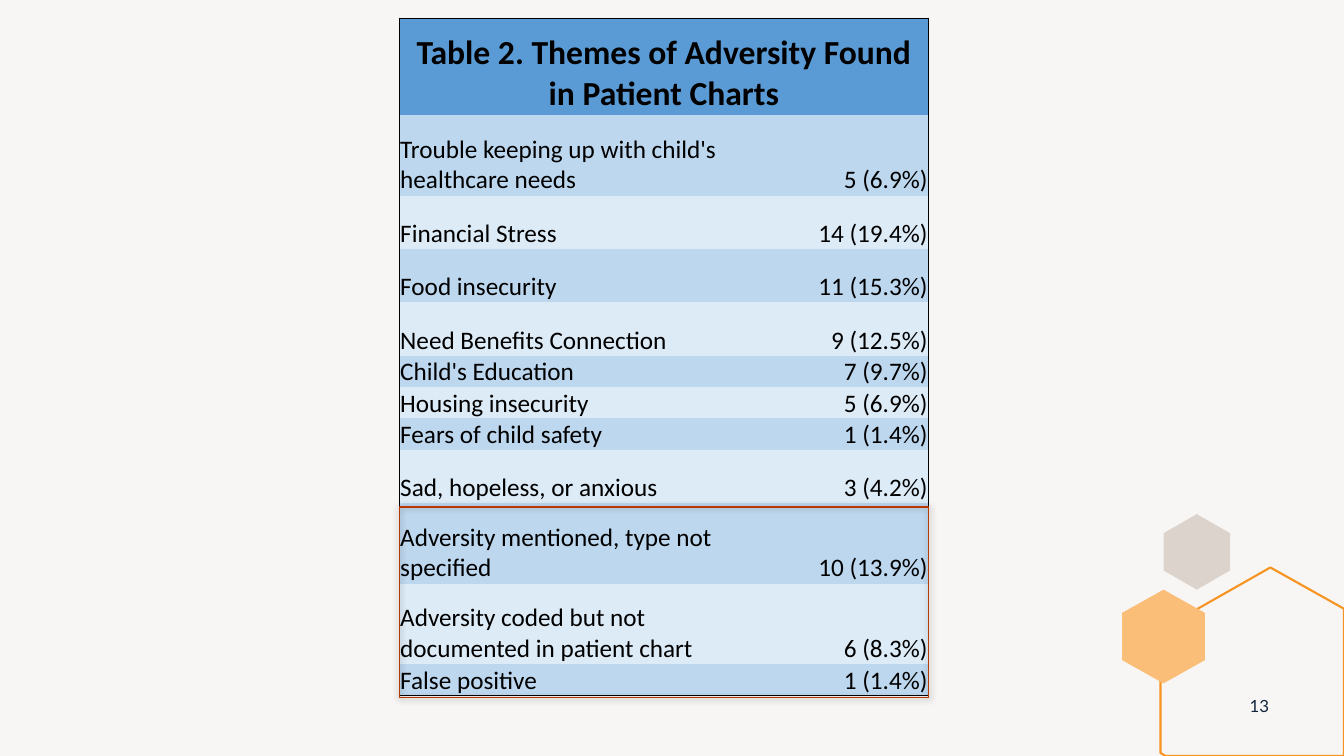
from lxml import etree
from pptx import Presentation
from pptx.dml.color import RGBColor
from pptx.enum.shapes import MSO_SHAPE
from pptx.enum.text import MSO_ANCHOR, PP_ALIGN
from pptx.oxml.ns import qn
from pptx.util import Inches, Pt

RECTANGLE = MSO_SHAPE.RECTANGLE
BOTTOM, MIDDLE = MSO_ANCHOR.BOTTOM, MSO_ANCHOR.MIDDLE
LEFT, CENTER, RIGHT = PP_ALIGN.LEFT, PP_ALIGN.CENTER, PP_ALIGN.RIGHT

BACKGROUND = RGBColor(0xF8, 0xF6, 0xF5)
BLACK = RGBColor(0, 0, 0)
NAVY = RGBColor(0x0F, 0x25, 0x3E)
TAUPE = RGBColor(0xDC, 0xD3, 0xCC)
ORANGE = RGBColor(0xF7, 0x93, 0x20)
PEACH = RGBColor(0xFA, 0xBE, 0x79)
RUST = RGBColor(0xB8, 0x38, 0x03)
HEADER_BLUE = RGBColor(0x5B, 0x9B, 0xD5)
BANDS = (RGBColor(0xBD, 0xD7, 0xEE), RGBColor(0xDD, 0xEB, 0xF7))

PLAIN_TABLE_STYLE = "{2D5ABB26-0587-4C30-8999-92F81FD0307C}"
TITLE = "Table 2. Themes of Adversity Found in Patient Charts"
TITLE_HEIGHT = 0.96
COLUMN_WIDTHS = (3.64, 1.61)
THEMES = (
    ("Trouble keeping up with child's healthcare needs", "5 (6.9%)", 0.8),
    ("Financial Stress", "14 (19.4%)", 0.53),
    ("Food insecurity", "11 (15.3%)", 0.53),
    ("Need Benefits Connection", "9 (12.5%)", 0.53),
    ("Child's Education", "7 (9.7%)", 0.31),
    ("Housing insecurity", "5 (6.9%)", 0.31),
    ("Fears of child safety", "1 (1.4%)", 0.31),
    ("Sad, hopeless, or anxious", "3 (4.2%)", 0.53),
    ("Adversity mentioned, type not specified", "10 (13.9%)", 0.8),
    ("Adversity coded but not documented in patient chart", "6 (8.3%)", 0.8),
    ("False positive", "1 (1.4%)", 0.31),
)

GREY_HEXAGON = ((11.87, 5.1), (12.2, 5.29), (12.2, 5.66),
                (11.87, 5.85), (11.54, 5.66), (11.54, 5.29))
OUTLINE_HEXAGON = ((12.6, 5.63), (13.33, 6.04), (13.33, 7.5),
                   (11.56, 7.5), (11.51, 7.47), (11.51, 6.25))
PEACH_HEXAGON = ((11.54, 5.85), (11.95, 6.08), (11.95, 6.55),
                 (11.54, 6.78), (11.13, 6.55), (11.13, 6.08))


def add_hexagon(page, corners, fill=None, line=None):
    """Draw a closed outline through the corners, filled or stroked."""
    points = [(Inches(x), Inches(y)) for x, y in corners]
    builder = page.shapes.build_freeform(*points[0])
    builder.add_line_segments(points[1:], close=True)
    hexagon = builder.convert_to_shape()
    hexagon.shadow.inherit = False
    if fill is None:
        hexagon.fill.background()
    else:
        hexagon.fill.solid()
        hexagon.fill.fore_color.rgb = fill
    if line is None:
        hexagon.line.fill.background()
    else:
        hexagon.line.color.rgb = line
        hexagon.line.width = Pt(1.5)


def write_text(frame, text, align, font, size, color, bold=False):
    """Put one formatted paragraph into a text frame."""
    frame.text = text
    para = frame.paragraphs[0]
    para.alignment = align
    style = para.runs[0].font
    style.name, style.size, style.bold = font, Pt(size), bold
    style.color.rgb = color


def add_page_number(page, number):
    """Add the page number in the lower right corner."""
    box = page.shapes.add_textbox(Inches(12.24), Inches(6.8), Inches(0.5), Inches(0.4))
    box.text_frame.word_wrap = True
    box.text_frame.vertical_anchor = MIDDLE
    write_text(box.text_frame, number, CENTER, "Lato", 12, NAVY)


def add_border(cell, side):
    """Give one side of a cell a thin black border."""
    properties = cell._tc.get_or_add_tcPr()
    border = etree.SubElement(properties, qn(f"a:ln{side}"), w=str(Pt(1)))
    fill = etree.SubElement(border, qn("a:solidFill"))
    etree.SubElement(fill, qn("a:srgbClr"), val=str(BLACK))


def format_cell(cell, text, align, fill, sides, size=18, bold=False):
    """Fill, border and label one table cell."""
    for side in sides:
        add_border(cell, side)
    cell.fill.solid()
    cell.fill.fore_color.rgb = fill
    cell.margin_left = cell.margin_right = cell.margin_top = Inches(0.01)
    cell.margin_bottom = 0
    cell.vertical_anchor = BOTTOM
    if text:
        write_text(cell.text_frame, text, align, "Calibri", size, BLACK, bold)


def add_theme_table(page):
    """Add the table of adversity themes under its merged title row."""
    heights = [TITLE_HEIGHT] + [height for _, _, height in THEMES]
    frame = page.shapes.add_table(
        len(heights), len(COLUMN_WIDTHS), Inches(3.96), Inches(0.18),
        Inches(sum(COLUMN_WIDTHS)), Inches(sum(heights)))
    frame.element.find(".//" + qn("a:tableStyleId")).text = PLAIN_TABLE_STYLE
    table = frame.table
    table.first_row = table.horz_banding = False
    for column, width in zip(table.columns, COLUMN_WIDTHS):
        column.width = Inches(width)
    for row, height in zip(table.rows, heights):
        row.height = Inches(height)

    table.cell(0, 0).merge(table.cell(0, 1))
    format_cell(table.cell(0, 0), TITLE, CENTER, HEADER_BLUE, "LRT", 24, True)
    format_cell(table.cell(0, 1), "", CENTER, HEADER_BLUE, "RT")
    for index, (theme, count, _) in enumerate(THEMES):
        band = BANDS[index % 2]
        bottom = "B" if index == len(THEMES) - 1 else ""
        format_cell(table.cell(index + 1, 0), theme, LEFT, band, "L" + bottom)
        format_cell(table.cell(index + 1, 1), count, RIGHT, band, "R" + bottom)


def add_highlight_frame(page):
    """Outline the last three themes with a softly shadowed rectangle."""
    outline = page.shapes.add_shape(
        RECTANGLE, Inches(3.96), Inches(5.03), Inches(5.25), Inches(1.89))
    outline.fill.background()
    outline.line.color.rgb = RUST
    outline.line.width = Pt(1)
    outline.shadow.inherit = False
    effects = outline.element.spPr.find(qn("a:effectLst"))
    shadow = etree.SubElement(effects, qn("a:outerShdw"), blurRad=str(Pt(5)),
                              dist="0", dir="0", algn="ctr", rotWithShape="0")
    color = etree.SubElement(shadow, qn("a:srgbClr"), val=str(BLACK))
    etree.SubElement(color, qn("a:alpha"), val="40000")


def main():
    """Build the slide and save the deck."""
    deck = Presentation()
    deck.slide_width, deck.slide_height = Inches(13.33), Inches(7.5)
    page = deck.slides.add_slide(deck.slide_layouts[6])
    page.background.fill.solid()
    page.background.fill.fore_color.rgb = BACKGROUND
    add_hexagon(page, GREY_HEXAGON, fill=TAUPE)
    add_hexagon(page, OUTLINE_HEXAGON, line=ORANGE)
    add_hexagon(page, PEACH_HEXAGON, fill=PEACH)
    add_page_number(page, "13")
    add_theme_table(page)
    add_highlight_frame(page)
    deck.save("out.pptx")


if __name__ == "__main__":
    main()
